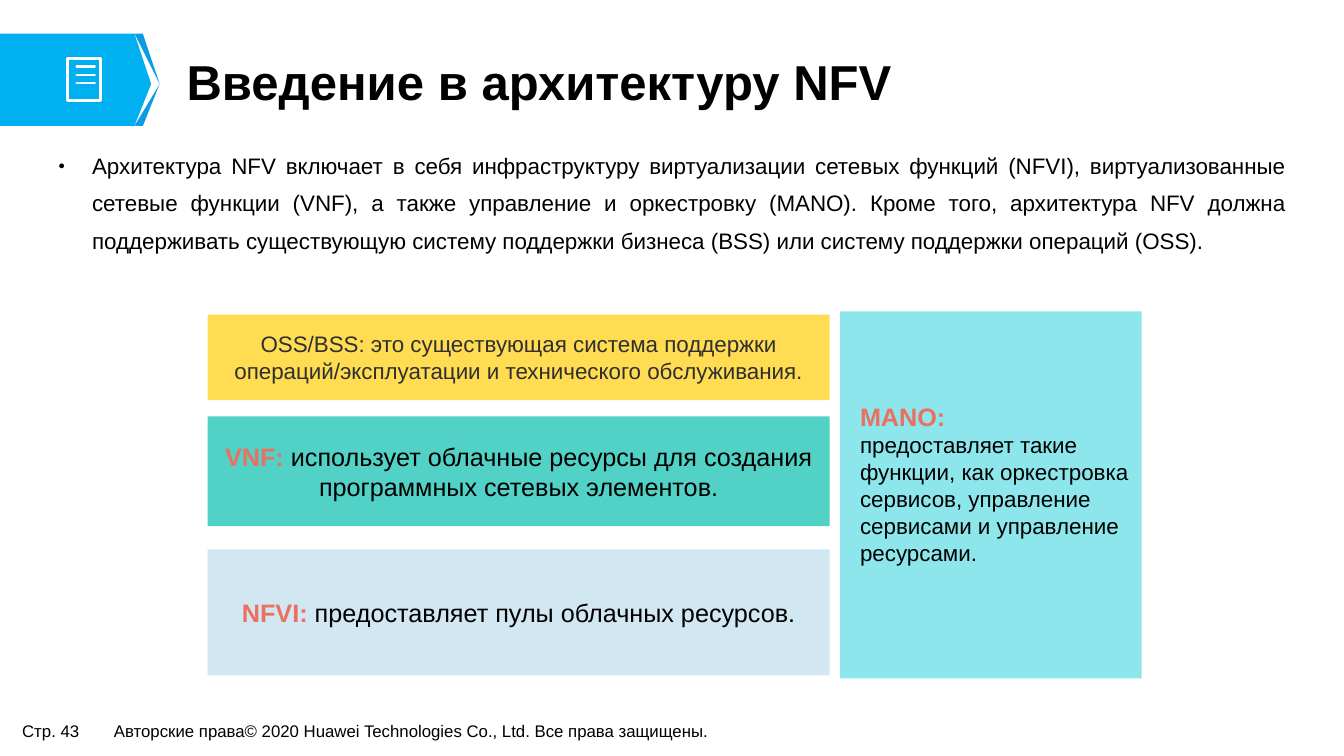
import pptx
import pptx.dml.color
import pptx.enum.shapes
import pptx.enum.text
import pptx.util
from lxml import etree

ALIGN = pptx.enum.text.PP_ALIGN
ANCHOR = pptx.enum.text.MSO_ANCHOR
DRAWING_NS = "http://schemas.openxmlformats.org/drawingml/2006/main"
BLACK, WHITE, CORAL = "000000", "FFFFFF", "EC7061"

# Grid of 160 by 90 square cells, each a twelfth of an inch
deck = pptx.Presentation()
deck.slide_width = pptx.util.Inches(13.33)
deck.slide_height = pptx.util.Inches(7.5)
CELL = deck.slide_height / 90
slide = deck.slides.add_slide(deck.slide_layouts[5])
shapes = slide.shapes


def color(value):
    return pptx.dml.color.RGBColor.from_string(value)


def write(frame, paragraphs, align=ALIGN.LEFT, anchor=ANCHOR.TOP, insets=(0, 0), wrap=True):
    """Each paragraph is a size and a list of (text, color, bold) runs."""
    frame.word_wrap = wrap
    frame.auto_size = pptx.enum.text.MSO_AUTO_SIZE.NONE
    frame.vertical_anchor = anchor
    frame.margin_left = frame.margin_right = round(insets[0] * CELL)
    frame.margin_top = frame.margin_bottom = round(insets[1] * CELL)
    for index, (size, runs) in enumerate(paragraphs):
        paragraph = frame.add_paragraph() if index else frame.paragraphs[0]
        paragraph.alignment = align
        paragraph.font.name = "Arial"
        paragraph.font.size = pptx.util.Pt(size)
        for text, ink, bold in runs:
            run = paragraph.add_run()
            run.text = text
            run.font.bold = bold
            run.font.color.rgb = color(ink)


# Footer
for left, width, text in [
    (1.56, 9.24, "Стр. 43"),
    (12.48, 76.32, "Авторские права© 2020 Huawei Technologies Co., Ltd. Все права защищены."),
]:
    footer = shapes.add_textbox(*[round(n * CELL) for n in (left, 85.32, width, 3.48)])
    write(footer.text_frame, [(12, [(text, BLACK, False)])], insets=(1.08, 0.5), wrap=False)

# Blue flag, its chevron and the receipt outline
flag = [(0, 3.84), (15.84, 3.84), (18.12, 9.54), (15.84, 15.24), (0, 15.24)]
chevron = [(16.32, 3.84), (17.04, 3.84), (19.44, 9.54), (17.04, 15.24), (16.32, 15.24), (18.72, 9.54)]
receipt = [
    (8.22, 6.78), (12.06, 6.78), (12.32, 6.9), (12.42, 7.2), (12.42, 12), (12.12, 12.3),
    (11.16, 11.82), (10.2, 12.3), (9.24, 11.82), (8.22, 12.3), (7.86, 12), (7.86, 7.2), (7.96, 6.9),
]
for points, fill in [(flag, "00B0F0"), (chevron, "0B9CE5"), (receipt, None)]:
    builder = shapes.build_freeform(*points[0], scale=CELL)
    builder.add_line_segments(points[1:], close=True)
    outline = builder.convert_to_shape()
    outline.shadow.inherit = False
    if fill:
        outline.fill.solid()
        outline.fill.fore_color.rgb = color(fill)
        outline.line.fill.background()
    else:
        outline.fill.background()
        outline.line.color.rgb = color(WHITE)
        outline.line.width = pptx.util.Pt(2.2)

# Text lines on the receipt
for row in range(3):
    y = round((7.92 + row * 0.98) * CELL)
    stroke = shapes.add_connector(
        pptx.enum.shapes.MSO_CONNECTOR.STRAIGHT, round(9.12 * CELL), y, round(11.28 * CELL), y)
    stroke.line.color.rgb = color(WHITE)
    stroke.line.width = pptx.util.Pt(1.7)
    stroke.line._get_or_add_ln().set("cap", "rnd")
    etree.SubElement(stroke._element.spPr, f"{{{DRAWING_NS}}}effectLst")

# Architecture blocks
blocks = [
    (100, 37.08, 35.88, 43.68, "8DE6EC", []),
    (24.72, 37.44, 74.04, 10.2, "FFDC52", [(16, [
        ("OSS/BSS: это существующая система поддержки операций/эксплуатации "
         "и технического обслуживания.", "2F2F2F", False)])]),
    (24.72, 49.56, 74.04, 13.08, "52D1C6", [(18, [
        ("VNF: ", CORAL, True),
        ("использует облачные ресурсы для создания программных сетевых элементов.", BLACK, False)])]),
    (24.72, 65.4, 74.04, 15, "D1E7F1", [(18, [
        ("NFVI: ", CORAL, True),
        ("предоставляет пулы облачных ресурсов.", BLACK, False)])]),
]
for *place, fill, paragraphs in blocks:
    block = shapes.add_shape(
        pptx.enum.shapes.MSO_SHAPE.RECTANGLE, *[round(n * CELL) for n in place])
    block.shadow.inherit = False
    block.fill.solid()
    block.fill.fore_color.rgb = color(fill)
    block.line.fill.background()
    write(block.text_frame, paragraphs, ALIGN.CENTER, ANCHOR.MIDDLE)

# MANO description
mano = shapes.add_textbox(*[round(n * CELL) for n in (102.36, 47.76, 33.48, 19.8)])
write(mano.text_frame, [
    (18, [("MANO:", CORAL, True)]),
    (16, [("предоставляет такие функции, как оркестровка сервисов, управление "
           "сервисами и управление ресурсами.", BLACK, False)]),
])

# Introduction with a small bullet
intro = shapes.add_textbox(*[round(n * CELL) for n in (5.88, 16.32, 148.32, 15.12)])
intro_paragraph = intro.text_frame.paragraphs[0]
intro_paragraph.line_spacing = 1.4
intro_properties = intro_paragraph._p.get_or_add_pPr()
intro_properties.set("marL", str(round(4 * CELL)))
intro_properties.set("indent", str(round(-4 * CELL)))
for tag, key, value in [
    ("buSzPct", "val", "50000"), ("buFont", "typeface", "Arial"), ("buChar", "char", "●"),
]:
    etree.SubElement(intro_properties, f"{{{DRAWING_NS}}}{tag}").set(key, value)
write(intro.text_frame, [(16, [(
    "Архитектура NFV включает в себя инфраструктуру виртуализации сетевых функций (NFVI), "
    "виртуализованные сетевые функции (VNF), а также управление и оркестровку (MANO). "
    "Кроме того, архитектура NFV должна поддерживать существующую систему поддержки бизнеса (BSS) "
    "или систему поддержки операций (OSS).", BLACK, False)])], ALIGN.JUSTIFY, insets=(1.08, 0.5))

# Title
title = shapes.title
title.left, title.top, title.width, title.height = [
    round(n * CELL) for n in (20.88, 5.88, 129, 8.4)]
title.text_frame.paragraphs[0].line_spacing = 0.9
write(title.text_frame, [(35, [("Введение в архитектуру NFV", BLACK, True)])],
      anchor=ANCHOR.MIDDLE, insets=(1.32, 0.72))

deck.save("out.pptx")
